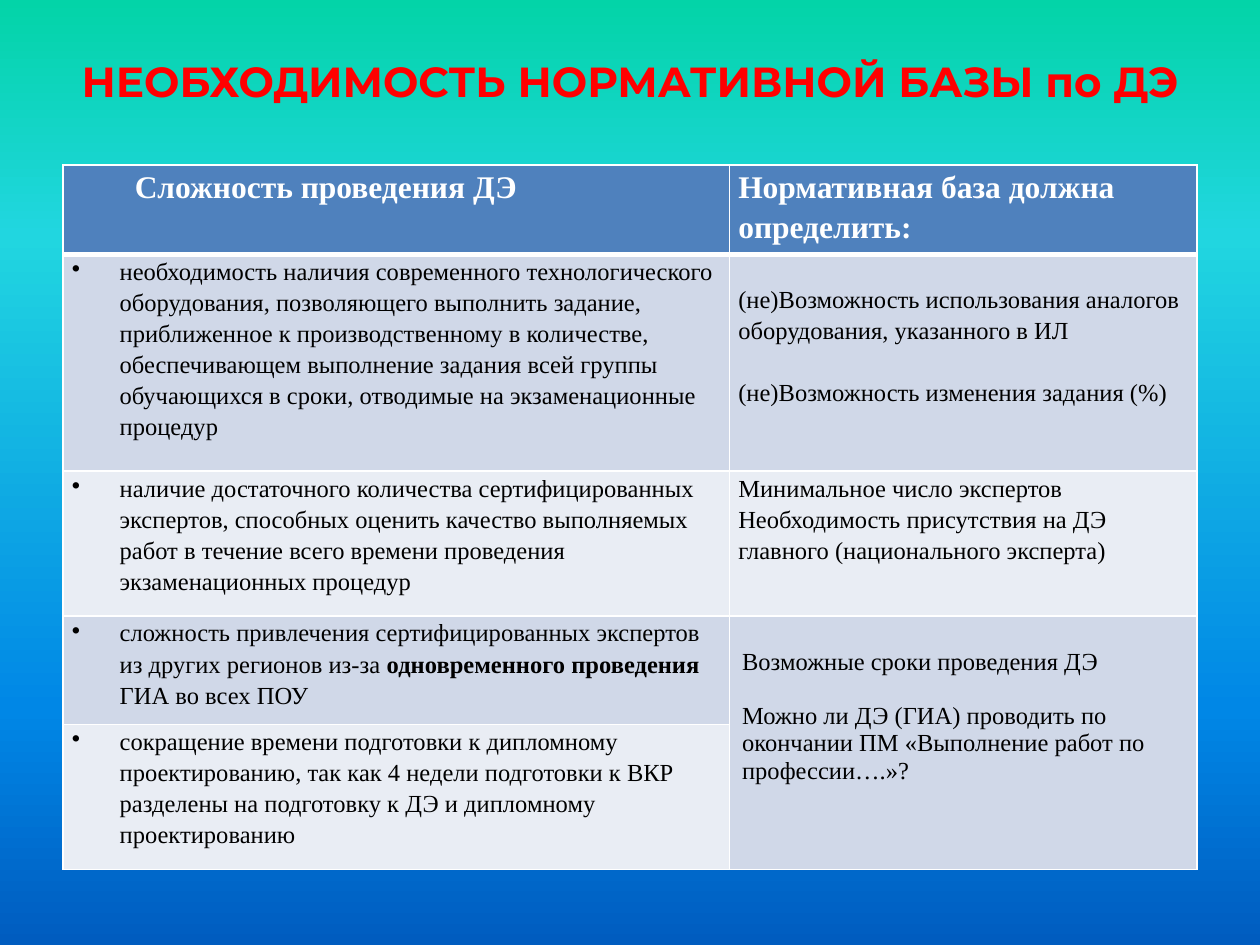
from dataclasses import dataclass

from lxml.etree import SubElement
from pptx import Presentation
from pptx.dml.color import RGBColor
from pptx.enum.text import MSO_ANCHOR as Anchor, PP_ALIGN as Align
from pptx.oxml.ns import qn
from pptx.util import Inches, Pt


@dataclass(frozen=True)
class Theme:
    title_font: str = "Montserrat"
    body_font: str = "Times New Roman"
    title_size: int = 24
    header_size: int = 18
    body_size: int = 14
    title_color: str = "FF0000"
    header_text: str = "FFFFFF"
    body_text: str = "000000"
    border: str = "FFFFFF"
    header_fill: str = "4F81BD"
    bands: tuple = ("D0D8E8", "E9EDF4")
    backdrop: tuple = ((0, "03D4A8"), (25, "21D6E0"), (75, "0087E6"), (100, "005CBF"))


@dataclass(frozen=True)
class CellText:
    """Paragraphs are strings; text between asterisks is bold."""
    paragraphs: tuple
    bullet: bool = False
    indent: float = 0
    line_spacing: float = 1.15
    gap: float = 0
    margins: tuple = (0.07, 0)
    top: float = 0


def bullet_item(text):
    return CellText((text,), bullet=True, indent=0.38)


HEADERS = (
    CellText(("Сложность проведения ДЭ",), indent=0.5),
    CellText(("Нормативная база должна определить:",)),
)
ROWS = (
    (bullet_item("необходимость наличия современного технологического оборудования, "
                 "позволяющего выполнить задание, приближенное к производственному в количестве, "
                 "обеспечивающем выполнение задания всей группы обучающихся в сроки, "
                 "отводимые на экзаменационные процедур"),
     CellText(("(не)Возможность использования аналогов оборудования, указанного в ИЛ",
               "(не)Возможность изменения задания (%)"), gap=17.7, top=0.22)),
    (bullet_item("наличие достаточного количества сертифицированных экспертов, способных "
                 "оценить качество выполняемых работ в течение всего времени проведения "
                 "экзаменационных процедур"),
     CellText(("Минимальное число экспертов",
               "Необходимость присутствия на ДЭ главного (национального эксперта)"))),
    (bullet_item("сложность привлечения сертифицированных экспертов из других регионов "
                 "из-за *одновременного проведения* ГИА во всех ПОУ"),
     CellText(("Возможные сроки проведения ДЭ",
               "Можно ли ДЭ (ГИА) проводить по окончании ПМ «Выполнение работ по профессии….»?"),
              line_spacing=1, gap=15.5, margins=(0.1, 0.05), top=0.26)),
    (bullet_item("сокращение времени подготовки к дипломному проектированию, так как 4 недели "
                 "подготовки к ВКР разделены на подготовку к ДЭ и дипломному проектированию"),
     None),
)


class SlideBuilder:
    def __init__(self, presentation, theme):
        self.theme = theme
        self.width = presentation.slide_width
        self.height = presentation.slide_height
        self.slide = presentation.slides.add_slide(presentation.slide_layouts[5])

    def box(self, left, top, width, height):
        """Turn shares of the slide into lengths."""
        return (int(left * self.width), int(top * self.height),
                int(width * self.width), int(height * self.height))

    def style_font(self, font, name, size, color, bold):
        font.name, font.size, font.bold = name, Pt(size), bold
        font.color.rgb = RGBColor.from_string(color)

    def background(self):
        fill = self.slide.background.fill
        fill.gradient()
        fill.gradient_angle = 270
        stops = self.slide.background._cSld.find(".//" + qn("a:gsLst"))
        for stop in list(stops):
            stops.remove(stop)
        for percent, color in self.theme.backdrop:
            stop = SubElement(stops, qn("a:gs"), pos=str(percent * 1000))
            SubElement(stop, qn("a:srgbClr"), val=color)

    def title(self, text, *area):
        title = self.slide.shapes.title
        title.left, title.top, title.width, title.height = self.box(*area)
        frame = title.text_frame
        frame.text, frame.vertical_anchor = text, Anchor.MIDDLE
        paragraph = frame.paragraphs[0]
        paragraph.alignment = Align.CENTER
        theme = self.theme
        self.style_font(paragraph.font, theme.title_font, theme.title_size,
                        theme.title_color, True)

    def table(self, headers, rows, column_widths, row_heights, *area):
        table = self.slide.shapes.add_table(
            len(rows) + 1, len(headers), *self.box(*area)).table
        for column, width in zip(table.columns, column_widths):
            column.width = Inches(width)
        for row, height in zip(table.rows, row_heights):
            row.height = Inches(height)
        for row_index, contents in enumerate((headers, *rows)):
            for column_index, content in enumerate(contents):
                cell = table.cell(row_index, column_index)
                self.paint_cell(cell, row_index)
                if content:
                    self.fill_cell(cell, content, row_index == 0)
        return table

    def paint_cell(self, cell, row_index):
        theme = self.theme
        properties = cell._tc.get_or_add_tcPr()
        widths = {"L": 1, "R": 1, "T": 3 if row_index == 1 else 1,
                  "B": 3 if row_index == 0 else 1}
        for side, width in widths.items():
            line = SubElement(properties, qn("a:ln" + side), w=str(Pt(width)))
            SubElement(SubElement(line, qn("a:solidFill")), qn("a:srgbClr"), val=theme.border)
        color = theme.bands[(row_index - 1) % 2] if row_index else theme.header_fill
        cell.fill.solid()
        cell.fill.fore_color.rgb = RGBColor.from_string(color)

    def fill_cell(self, cell, content, header):
        theme = self.theme
        side, edge = content.margins
        cell.margin_left = cell.margin_right = Inches(side)
        cell.margin_top, cell.margin_bottom = Inches(content.top), Inches(edge)
        size, color = ((theme.header_size, theme.header_text) if header
                       else (theme.body_size, theme.body_text))
        for index, text in enumerate(content.paragraphs):
            frame = cell.text_frame
            paragraph = frame.add_paragraph() if index else frame.paragraphs[0]
            paragraph.line_spacing = content.line_spacing
            if index and content.gap:
                paragraph.space_before = Pt(content.gap)
            self.indent(paragraph, content)
            self.style_font(paragraph.font, theme.body_font, size, color, header)
            for part, words in enumerate(text.split("*")):
                run = paragraph.add_run()
                run.text = words
                if part % 2:
                    run.font.bold = True

    def indent(self, paragraph, content):
        properties = paragraph._p.get_or_add_pPr()
        properties.set("marL", str(Inches(content.indent)))
        if content.bullet:
            properties.set("indent", str(-Inches(content.indent)))
            SubElement(properties, qn("a:buChar"), char="•")


def main():
    presentation = Presentation()
    presentation.slide_width, presentation.slide_height = Inches(10), Inches(7.5)
    builder = SlideBuilder(presentation, Theme())
    builder.background()
    builder.title("НЕОБХОДИМОСТЬ НОРМАТИВНОЙ БАЗЫ по ДЭ", 0.03, 0.04, 0.94, 0.09)
    table = builder.table(HEADERS, ROWS, (5.29, 3.71), (0.71, 1.72, 1.15, 0.86, 1.15),
                          0.05, 1.31 / 7.5, 0.9, 5.59 / 7.5)
    table.cell(3, 1).merge(table.cell(4, 1))
    presentation.save("out.pptx")


if __name__ == "__main__":
    main()
